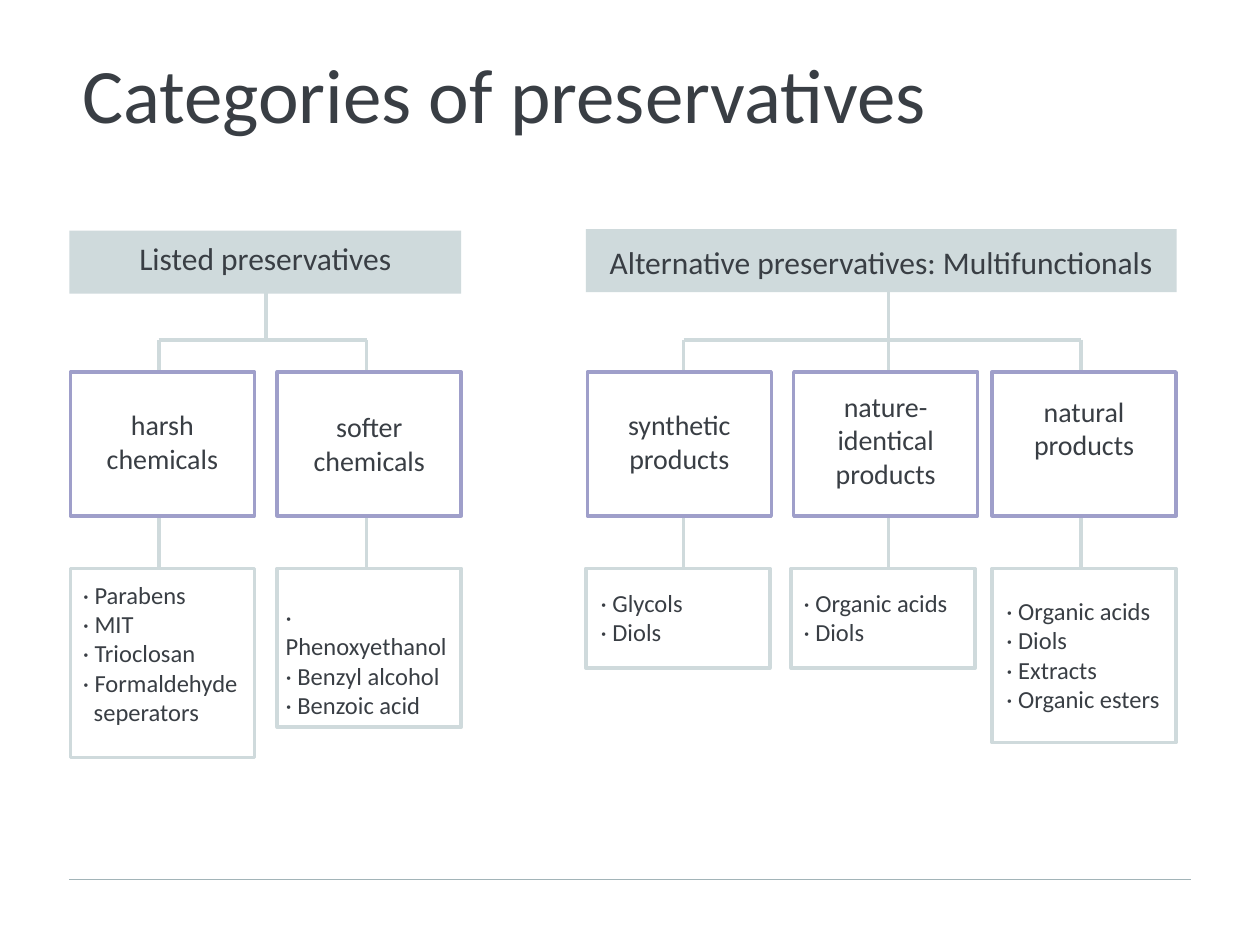
"""Build the slide that sorts preservatives into two trees."""
from lxml import etree
from pptx import Presentation
from pptx.dml.color import RGBColor
from pptx.enum import shapes, text
from pptx.oxml import ns
from pptx.util import Cm, Pt

INK = RGBColor(0x39, 0x3E, 0x44)
MIST = RGBColor(0xCF, 0xDA, 0xDC)
LILAC = RGBColor(0x9F, 0x9F, 0xCA)
GREY = RGBColor(0xA2, 0xB4, 0xB8)
WHITE = RGBColor(0xFF, 0xFF, 0xFF)

TITLE = "Categories of preservatives"
HEADS = [
    dict(words="Listed preservatives", left=1.4, top=4.65, width=7.9,
         text_top=4.7, trunk=5.36, kids=(0, 1)),
    dict(words="Alternative preservatives: Multifunctionals", left=11.81, top=4.62,
         width=11.91, text_top=4.78, trunk=17.91, kids=(2, 3, 4)),
]
KINDS = [
    dict(words="harsh\nchemicals", left=1.42, stem=3.2, text_top=8.1, lines=2,
         items=["Parabens", "MIT", "Trioclosan", "Formaldehyde\nseperators"],
         box=(1.42, 3.81), note=(1.42, 11.56, 3.71)),
    dict(words="softer chemicals", left=5.59, stem=7.39, text_top=8.13, lines=2,
         items=["Phenoxyethanol", "Benzyl alcohol", "Benzoic acid"],
         box=(5.59, 3.2), note=(5.51, 12.01, 3.96)),
    dict(words="synthetic products", left=11.84, stem=13.78, text_top=8.1, lines=2,
         items=["Glycols", "Diols"],
         box=(11.81, 2.01), note=(11.86, 11.73, 3.71)),
    dict(words="nature-identical\nproducts", left=16, stem=17.91, text_top=7.72, lines=3,
         items=["Organic acids", "Diols"],
         box=(15.95, 2.01), note=(15.95, 11.73, 3.61)),
    dict(words="natural products", left=20, stem=21.79, text_top=7.82, lines=2,
         items=["Organic acids", "Diols", "Extracts", "Organic esters"],
         box=(20, 3.51), note=(20.04, 11.89, 3.81)),
]
WIDE, KIND_TOP, KIND_TALL, LIST_TOP = 3.71, 7.5, 2.9, 11.46
HEAD_TALL, BAR, STEM_END, INDENT = 1.27, 6.85, 11.8, 0.22

deck = Presentation()
deck.slide_width, deck.slide_height = Cm(25.4), Cm(19.05)
slide = deck.slides.add_slide(deck.slide_layouts[5])


def draw_line(x1, y1, x2, y2, hue=MIST, weight=2):
    line = slide.shapes.add_connector(
        shapes.MSO_CONNECTOR.STRAIGHT, Cm(x1), Cm(y1), Cm(x2), Cm(y2))
    line.line.color.rgb = hue
    line.line.width = Pt(weight)
    etree.SubElement(line._element.spPr, ns.qn("a:effectLst"))


def draw_box(left, top, width, height, fill=WHITE, edge=None):
    box = slide.shapes.add_shape(
        shapes.MSO_SHAPE.RECTANGLE, Cm(left), Cm(top), Cm(width), Cm(height))
    box.shadow.inherit = False
    box.fill.solid()
    box.fill.fore_color.rgb = fill
    if edge is None:
        box.line.fill.background()
    else:
        box.line.color.rgb = edge
        box.line.width = Pt(2)


def write(words, left, top, width, height, size, align=text.PP_ALIGN.CENTER, shape=None):
    shape = shape or slide.shapes.add_textbox(0, 0, 0, 0)
    shape.left, shape.top, shape.width, shape.height = map(Cm, (left, top, width, height))
    frame = shape.text_frame
    frame.word_wrap = True
    frame.auto_size = text.MSO_AUTO_SIZE.NONE
    frame.vertical_anchor = text.MSO_ANCHOR.TOP
    frame.text = words
    for para in frame.paragraphs:
        para.alignment = align
        para.font.size = Pt(size)
        para.font.name = "Calibri"
        para.font.color.rgb = INK
    return frame


def write_list(items, left, top, width):
    rows = "\n".join("· " + item for item in items).split("\n")
    frame = write("\n".join(rows), left, top, width, 0.25 + 0.6 * len(rows), 14,
                  align=text.PP_ALIGN.LEFT)
    for para in frame.paragraphs:
        if not para.text.startswith("·"):
            para._p.get_or_add_pPr().set("marL", str(Cm(INDENT)))


write(TITLE, 1.4, 0.81, 22.6, 2.9, 44, align=text.PP_ALIGN.LEFT, shape=slide.shapes.title)
draw_line(1.4, 17.73, 24, 17.73, hue=GREY, weight=0.75)

for head in HEADS:
    stems = [KINDS[kid]["stem"] for kid in head["kids"]]
    draw_line(head["trunk"], head["top"] + 1, head["trunk"], BAR)
    draw_line(stems[0], BAR, stems[-1], BAR)
    for stem in stems:
        draw_line(stem, BAR, stem, STEM_END)
    draw_box(head["left"], head["top"], head["width"], HEAD_TALL, fill=MIST)
    write(head["words"], head["left"], head["text_top"], head["width"], 1.02, 18)

for kind in KINDS:
    draw_box(kind["left"], KIND_TOP, WIDE, KIND_TALL, edge=LILAC)
    write(kind["words"], kind["left"], kind["text_top"], WIDE, 0.1 + 0.76 * kind["lines"], 16)
    left, tall = kind["box"]
    draw_box(left, LIST_TOP, WIDE, tall, edge=MIST)
    write_list(kind["items"], *kind["note"])

deck.save("out.pptx")
